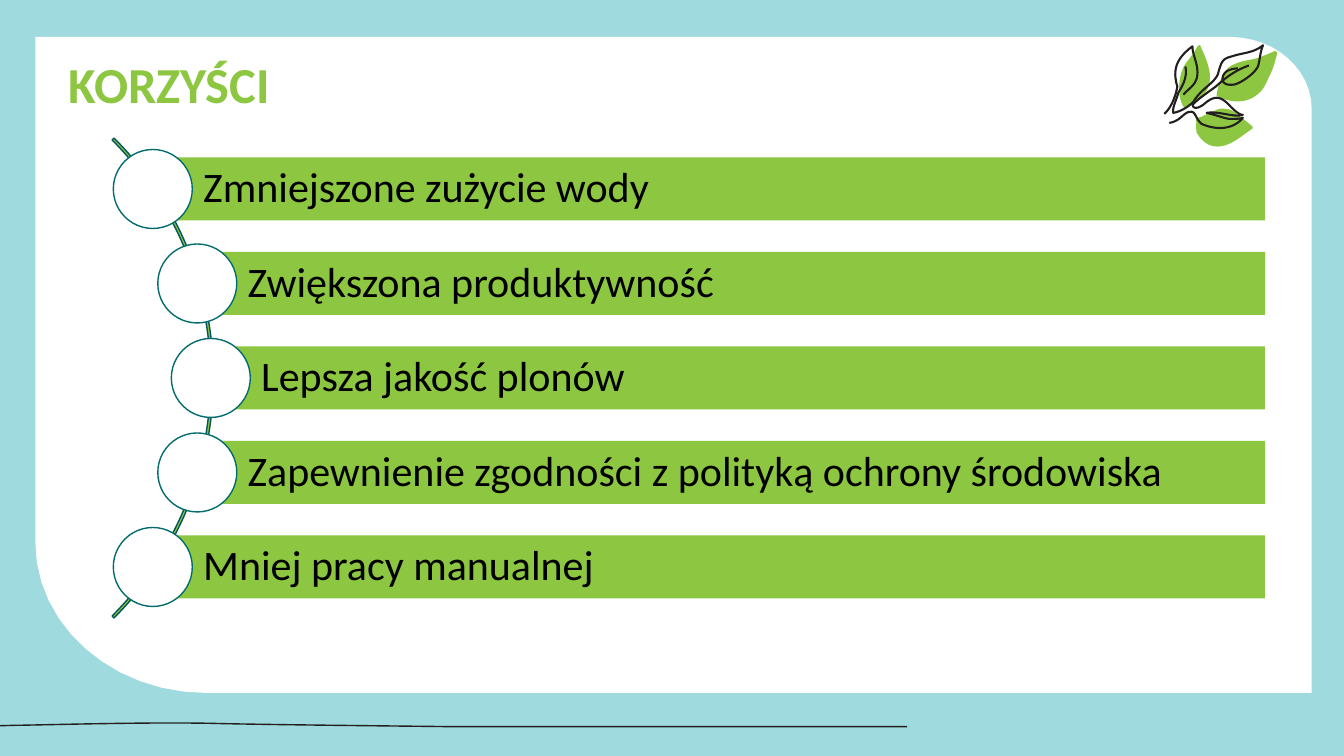
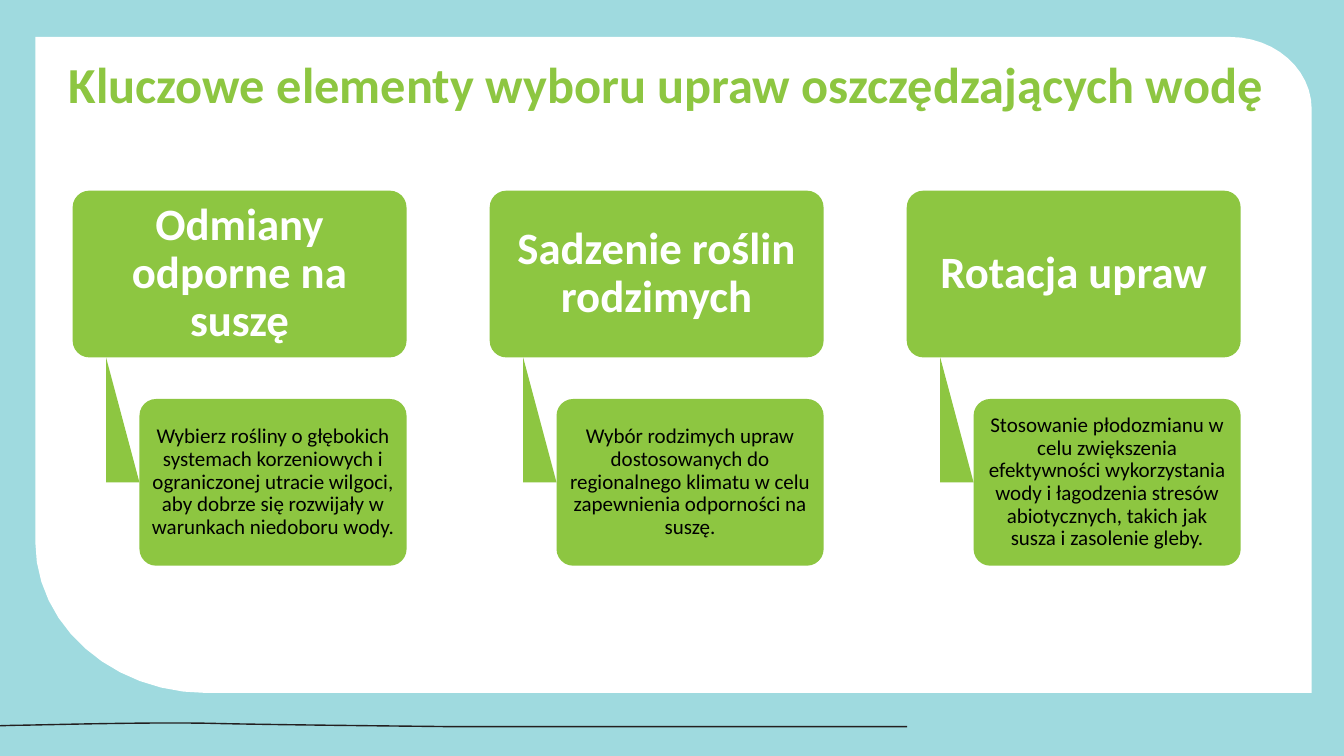
from math import sqrt

from pptx import Presentation
from pptx.dml.color import RGBColor
from pptx.enum.shapes import MSO_SHAPE
from pptx.enum.text import MSO_ANCHOR, PP_ALIGN
from pptx.util import Inches, Pt

# Grid of square cells covering the slide
COLS, ROWS = 32, 18
WIDTH, HEIGHT = Inches(13.333), Inches(7.5)
CELL = HEIGHT / ROWS

GREEN, AQUA, TEAL, DARK_TEAL = "8DC641", "9FDADF", "056C6E", "035657"
WHITE, BLACK, INK = "FFFFFF", "000000", "231F20"

# Outlines: a start point, then lines (x, y) or curves (two controls and an end)
PANEL = [(0.84, 0.88), (29.28, 0.88), (30.36, 0.88, 31.23, 1.65, 31.23, 2.6),
         (31.23, 16.5), (4.92, 16.5), (2.66, 16.5, 0.84, 14.88, 0.84, 12.9)]
WAVE = [(0, 17.28), (0.34, 17.27), (1.25, 17.26, 3.72, 17.18, 5.35, 17.23),
        (6.74, 17.26, 10.58, 17.3, 10.63, 17.3), (21.6, 17.3)]

# Sprig outlines, on a finer grid of their own
SPRIG_ORIGIN, SPRIG_STEP = (27.6, 0.96), 0.024
LEAVES = [
    [(28, 66), (38, 61, 48, 54, 50, 42), (52, 30, 46, 17, 41, 6),
     (41, 4, 39, 5, 38, 6), (35, 12, 31, 17, 27, 22), (24, 26, 22, 31, 21, 36),
     (19, 46, 19, 55, 23, 64), (24, 67, 26, 67, 28, 66)],
    [(97, 54), (103, 50, 106, 43, 109, 36), (113, 29, 115, 21, 117, 13),
     (117, 12, 116, 10, 114, 11), (107, 14, 100, 17, 92, 19), (86, 20, 80, 21, 74, 24),
     (69, 26, 65, 30, 63, 35), (60, 41, 58, 47, 57, 54), (57, 56, 59, 56, 59, 56),
     (71, 62, 86, 63, 97, 54)],
    [(92, 88), (93, 87, 93, 86, 92, 85), (87, 81, 82, 77, 77, 73),
     (73, 70, 70, 68, 65, 68), (61, 67, 57, 69, 53, 71), (49, 72, 46, 74, 42, 76),
     (38, 76, 35, 80, 37, 81), (36, 85, 37, 88, 37, 91), (40, 97, 44, 101, 50, 104),
     (66, 110, 80, 96, 92, 88)],
]
VEINS = [
    [(5, 73), (9, 70, 14, 62, 17, 51), (18, 46), (13, 29, 17, 18, 33, 6),
     (33, 14, 38, 22, 38, 32), (38, 44, 30, 47, 24, 54)],
    [(26, 26), (28, 36, 24, 44, 19, 52), (17, 60, 13, 66, 14, 72),
     (20, 71, 28, 67, 34, 61), (42, 47, 57, 42, 59, 31), (62, 20, 64, 18, 72, 16),
     (84, 12, 93, 13, 103, 5), (100, 12, 100, 20, 98, 26), (94, 34, 80, 43, 74, 44),
     (66, 45, 62, 42, 63, 37), (64, 30, 72, 28, 78, 28)],
    [(89, 25), (75, 30, 66, 37, 56, 46), (48, 52, 40, 57, 33, 64),
     (34, 70, 42, 66, 46, 62), (56, 54, 62, 56, 71, 66), (76, 71, 80, 74, 83, 74),
     (74, 77, 60, 70, 47, 72), (56, 74, 66, 78, 70, 78), (76, 78, 80, 78, 83, 77),
     (74, 88, 58, 90, 42, 83), (36, 78, 36, 70, 31, 71), (24, 71, 22, 80, 10, 82)],
]

BENEFITS = ["Zmniejszone zużycie wody", "Zwiększona produktywność", "Lepsza jakość plonów",
            "Zapewnienie zgodności z polityką ochrony środowiska", "Mniej pracy manualnej"]
CROPS = [
    ("Odmiany odporne na suszę",
     "Wybierz rośliny o głębokich systemach korzeniowych i ograniczonej utracie wilgoci, "
     "aby dobrze się rozwijały w warunkach niedoboru wody."),
    ("Sadzenie roślin rodzimych",
     "Wybór rodzimych upraw dostosowanych do regionalnego klimatu w celu zapewnienia "
     "odporności na suszę."),
    ("Rotacja upraw",
     "Stosowanie płodozmianu w celu zwiększenia efektywności wykorzystania wody i "
     "łagodzenia stresów abiotycznych, takich jak susza i zasolenie gleby."),
]


def rgb(value):
    return RGBColor.from_string(value)


def cells(*values):
    return [round(v * CELL) for v in values]


def flatten(outline, steps=12):
    """Turn lines and cubic curves into a list of points."""
    points = [outline[0]]
    for part in outline[1:]:
        if len(part) == 2:
            points.append(part)
            continue
        ctrl = [points[-1], part[:2], part[2:4], part[4:]]
        for i in range(1, steps + 1):
            t = i / steps
            weights = ((1 - t) ** 3, 3 * t * (1 - t) ** 2, 3 * t * t * (1 - t), t ** 3)
            points.append(tuple(sum(w * c[axis] for w, c in zip(weights, ctrl))
                                for axis in (0, 1)))
    return points


class Deck:
    font = "Calibri"

    def __init__(self):
        self.prs = Presentation()
        self.prs.slide_width, self.prs.slide_height = WIDTH, HEIGHT
        fill = self.prs.slide_master.background.fill
        fill.solid()
        fill.fore_color.rgb = rgb(AQUA)

    def new_slide(self, title):
        self.s = self.prs.slides.add_slide(self.prs.slide_layouts[6])
        self.outline(PANEL, fill=WHITE)
        self.outline(WAVE, line=INK)
        box = self.s.shapes.add_textbox(*cells(1.4, 1.32, 29.6, 2.1))
        self.text(box, title, 36, GREEN, bold=True, anchor=MSO_ANCHOR.TOP)

    def paint(self, sp, fill, line, weight):
        sp.shadow.inherit = False
        if fill:
            sp.fill.solid()
            sp.fill.fore_color.rgb = rgb(fill)
        else:
            sp.fill.background()
        if line:
            sp.line.color.rgb = rgb(line)
            sp.line.width = Pt(weight)
        else:
            sp.line.fill.background()
        return sp

    def shape(self, kind, x, y, w, h, fill=GREEN, line=None, adj=()):
        sp = self.s.shapes.add_shape(kind, *cells(x, y, w, h))
        for i, value in enumerate(adj):
            sp.adjustments[i] = value
        return self.paint(sp, fill, line, 1)

    def outline(self, parts, fill=None, line=None, weight=1, origin=(0, 0), step=1):
        points = [cells(origin[0] + x * step, origin[1] + y * step)
                  for x, y in flatten(parts)]
        builder = self.s.shapes.build_freeform(*points[0])
        builder.add_line_segments(points[1:], close=bool(fill))
        return self.paint(builder.convert_to_shape(), fill, line, weight)

    def text(self, sp, words, size, color, bold=False, align=PP_ALIGN.LEFT,
             anchor=MSO_ANCHOR.MIDDLE, insets=(0.24, 0.12, 0.24, 0.12)):
        tf = sp.text_frame
        tf.word_wrap = True
        tf.vertical_anchor = anchor
        tf.margin_left, tf.margin_top, tf.margin_right, tf.margin_bottom = cells(*insets)
        p = tf.paragraphs[0]
        p.alignment = align
        p.line_spacing = 0.9
        r = p.add_run()
        r.text = words
        r.font.name, r.font.size, r.font.bold = self.font, Pt(size), bold
        r.font.color.rgb = rgb(color)

    def card(self, x, y, w, h, words, size, color, bold, inset):
        sp = self.shape(MSO_SHAPE.ROUNDED_RECTANGLE, x, y, w, h, adj=[0.1])
        self.text(sp, words, size, color, bold, PP_ALIGN.CENTER,
                  insets=(inset, inset / 2) * 2)

    def sprig(self):
        place = dict(origin=SPRIG_ORIGIN, step=SPRIG_STEP)
        for leaf in LEAVES:
            self.outline(leaf, fill=GREEN, **place)
        for vein in VEINS:
            self.outline(vein, line=INK, weight=1.5, **place)


def benefits(deck):
    deck.new_slide("KORZYŚCI")
    # Arc that the bars follow
    mid_x, mid_y, radius, outer = -3, ROWS / 2, 8.02, 8.08
    deck.shape(MSO_SHAPE.BLOCK_ARC, mid_x - outer, mid_y - outer, 2 * outer, 2 * outer,
               line=DARK_TEAL, adj=[189, 27, 0.004])
    # Bars with a dot at the start
    right, bar, dot, pitch = 30.12, 1.5, 1.88, 2.25
    for i, words in enumerate(BENEFITS):
        dy = (i - (len(BENEFITS) - 1) / 2) * pitch
        x, y = mid_x + sqrt(radius ** 2 - dy ** 2), mid_y + dy
        sp = deck.shape(MSO_SHAPE.RECTANGLE, x, y - bar / 2, right - x, bar)
        deck.text(sp, words, 30, BLACK, insets=(1.2, 0.19, 0.19, 0.19))
        deck.shape(MSO_SHAPE.OVAL, x - dot / 2, y - dot / 2, dot, dot, WHITE, TEAL)
    deck.sprig()


def crops(deck):
    deck.new_slide("Kluczowe elementy wyboru upraw oszczędzających wodę")
    left, pitch, w, h = 1.73, 9.93, 7.95, 3.97
    top, low = 4.54, 9.5
    for i, (name, detail) in enumerate(CROPS):
        x = left + i * pitch
        deck.card(x, top, w, h, name, 32, WHITE, True, 0.17)
        # Wedge from the heading to the middle of the detail card
        elbow, start, end = x + w / 10, top + h, low + h / 2
        deck.outline([(elbow, start), (elbow, end), (x + w / 5, end)], fill=GREEN)
        deck.card(x + w / 5, low, w * 4 / 5, h, detail, 15, BLACK, False, 0.1)


def main():
    deck = Deck()
    benefits(deck)
    crops(deck)
    deck.prs.save("out.pptx")


if __name__ == "__main__":
    main()
